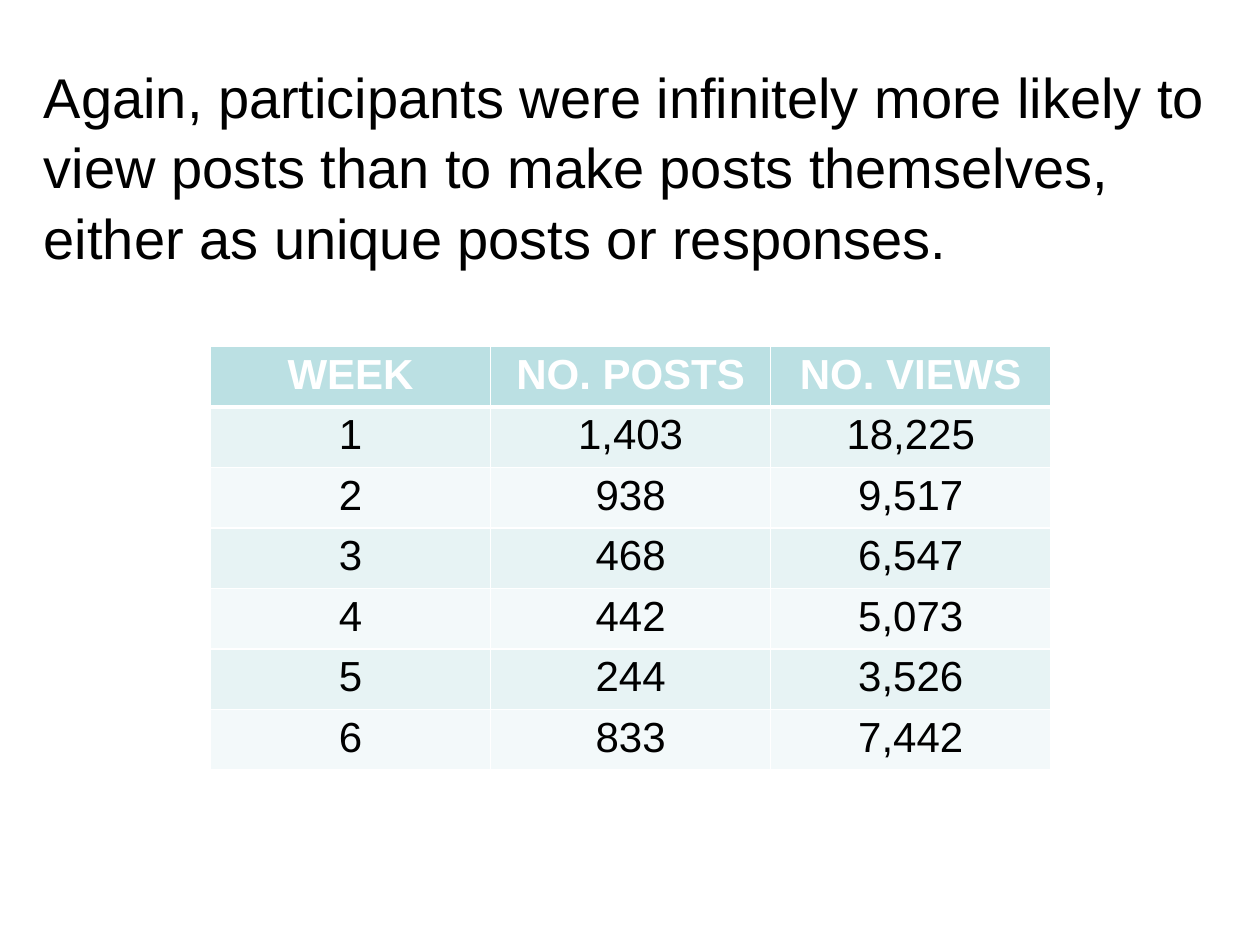
from lxml import etree
from pptx import Presentation
from pptx import util as u
from pptx.dml.color import RGBColor
from pptx.enum import text
from pptx.oxml import ns

COLORS = {
    "ink": "000000",
    "white": "FFFFFF",
    "header": "BBE0E3",
    "odd": "E7F3F4",
    "even": "F3F9FA",
}

STATEMENT = (
    "Again, participants were infinitely more likely to view posts than "
    "to make posts themselves, either as unique posts or responses."
)

ACTIVITY = [
    ("WEEK", "NO. POSTS", "NO. VIEWS"),
    ("1", "1,403", "18,225"),
    ("2", "938", "9,517"),
    ("3", "468", "6,547"),
    ("4", "442", "5,073"),
    ("5", "244", "3,526"),
    ("6", "833", "7,442"),
]


class SlideBuilder:
    font = "Arial"

    def __init__(self, page):
        self.page = page

    def color(self, name):
        return RGBColor.from_string(COLORS[name])

    def add_span(self, para, words, size, color, bold=False):
        span = para.add_run()
        span.text = words
        span.font.name = self.font
        span.font.size = u.Pt(size)
        span.font.bold = bold
        span.font.color.rgb = self.color(color)

    def statement(self, words, left, top, width, height):
        box = self.page.shapes.add_textbox(
            u.Inches(left), u.Inches(top), u.Inches(width), u.Inches(height)
        )
        box.text_frame.word_wrap = True
        para = box.text_frame.paragraphs[0]
        para.line_spacing = 1.05
        self.add_span(para, words, 32, "ink")

    def borders(self, cell, bottom, top):
        properties = cell._tc.get_or_add_tcPr()
        widths = {"lnL": 1, "lnR": 1, "lnT": top, "lnB": bottom}
        for position, (side, width) in enumerate(widths.items()):
            line = etree.Element(ns.qn(f"a:{side}"), w=str(u.Pt(width)))
            fill = etree.SubElement(line, ns.qn("a:solidFill"))
            etree.SubElement(fill, ns.qn("a:srgbClr"), val=COLORS["white"])
            properties.insert(position, line)

    def table(self, rows, left, top, width, row_height):
        frame = self.page.shapes.add_table(
            len(rows), len(rows[0]), u.Inches(left), u.Inches(top),
            u.Inches(width), u.Inches(row_height * len(rows)),
        )
        for row, values in enumerate(rows):
            header = row == 0
            fill = "header" if header else "odd" if row % 2 else "even"
            for column, value in enumerate(values):
                cell = frame.table.cell(row, column)
                cell.fill.solid()
                cell.fill.fore_color.rgb = self.color(fill)
                cell.margin_top = cell.margin_bottom = u.Inches(0.04)
                para = cell.text_frame.paragraphs[0]
                para.alignment = text.PP_ALIGN.CENTER
                self.add_span(para, value, 24, "white" if header else "ink", header)
                self.borders(cell, 3 if header else 1, 3 if row == 1 else 1)


def main():
    deck = Presentation()
    deck.slide_width = u.Inches(10)
    deck.slide_height = u.Inches(7.5)
    builder = SlideBuilder(deck.slides.add_slide(deck.slide_layouts[6]))
    builder.statement(STATEMENT, 0.25, 0.42, 9.5, 4.83)
    builder.table(ACTIVITY, 1.67, 2.75, 6.67, 0.47)
    deck.save("out.pptx")


if __name__ == "__main__":
    main()
